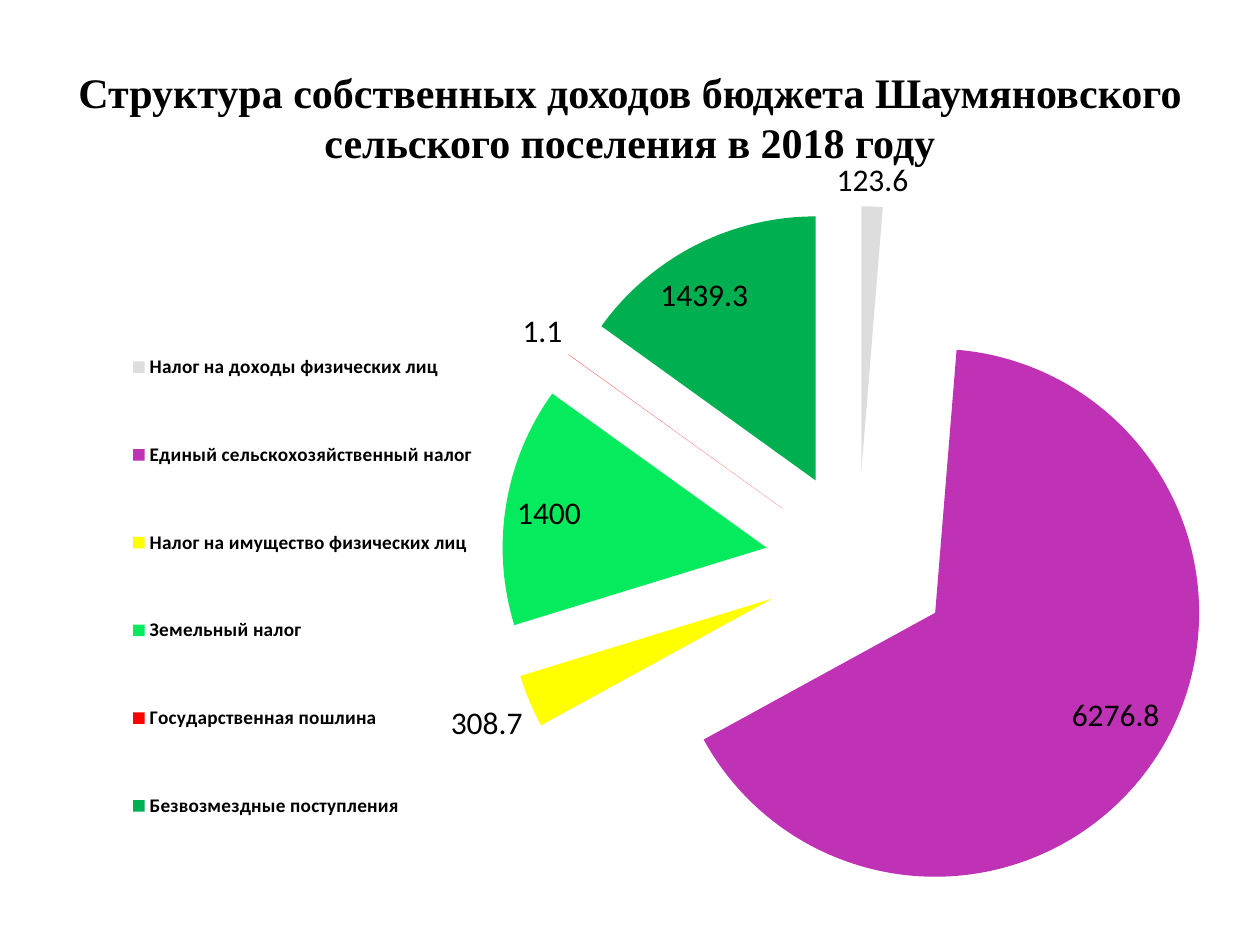
import pptx
import pptx.chart.data
import pptx.dml.color
import pptx.enum.chart
import pptx.enum.text
import pptx.oxml
import pptx.oxml.ns
import pptx.util

Inches = pptx.util.Inches
Pt = pptx.util.Pt
qn = pptx.oxml.ns.qn

TITLE = "Структура собственных доходов бюджета Шаумяновского сельского поселения в 2018 году"
TAXES = [
    ("Налог на доходы физических лиц", 123.6, "DDDDDD"),
    ("Единый сельскохозяйственный налог", 6276.8, "BF31B5"),
    ("Налог на имущество физических лиц", 308.7, "FFFF00"),
    ("Земельный налог", 1400, "05EB5D"),
    ("Государственная пошлина", 1.1, "FF0000"),
    ("Безвозмездные поступления", 1439.3, "00B050"),
]


def color(text):
    return pptx.dml.color.RGBColor.from_string(text)


def style(font, name, size, bold=False):
    font.name = name
    font.size = Pt(size)
    font.bold = bold
    font.color.rgb = color("000000")


def layout(x, y, w, h, inner=False):
    node = pptx.oxml.parse_xml(
        '<c:layout xmlns:c="http://schemas.openxmlformats.org/drawingml/2006/chart">'
        "<c:manualLayout/></c:layout>"
    )
    parts = [("layoutTarget", "inner")] if inner else []
    parts += [("xMode", "edge"), ("yMode", "edge")]
    parts += [("x", x), ("y", y), ("w", w), ("h", h)]
    for tag, val in parts:
        node[0].makeelement
        item = node[0].makeelement(qn("c:" + tag), {"val": str(val)})
        node[0].append(item)
    return node


def place(owner, node):
    for old in owner.findall(qn("c:layout")):
        owner.remove(old)
    mark = owner.find(qn("c:legendPos"))
    if mark is None:
        owner.insert(0, node)
    else:
        mark.addnext(node)


def add_title(slide, x, y, w, h):
    box = slide.shapes.add_textbox(Inches(x), Inches(y), Inches(w), Inches(h))
    frame = box.text_frame
    frame.word_wrap = True
    frame.vertical_anchor = pptx.enum.text.MSO_ANCHOR.MIDDLE
    para = frame.paragraphs[0]
    para.alignment = pptx.enum.text.PP_ALIGN.CENTER
    run = para.add_run()
    run.text = TITLE
    style(run.font, "Times New Roman", 24, True)


def add_pie(slide, x, y, w, h):
    data = pptx.chart.data.CategoryChartData()
    data.categories = [name for name, _, _ in TAXES]
    data.add_series("Series 1", [val for _, val, _ in TAXES])
    chart = slide.shapes.add_chart(
        pptx.enum.chart.XL_CHART_TYPE.PIE,
        Inches(x), Inches(y), Inches(w), Inches(h), data,
    ).chart
    chart.has_title = False
    style(chart.font, "Calibri", 18)

    chart.has_legend = True
    legend = chart.legend
    legend.position = pptx.enum.chart.XL_LEGEND_POSITION.RIGHT
    legend.include_in_layout = False
    style(legend.font, "Calibri", 11, True)
    place(legend._element, layout(0.1, 0.17, 0.29, 0.75))

    plot = chart.plots[0]
    plot.vary_by_categories = True
    area = chart._chartSpace.chart.plotArea
    place(area, layout(0.392, 0.062, 0.604, 0.905, True))

    pie = plot.series[0]
    cats = pie._element.find(qn("c:cat"))
    cats.addprevious(cats.makeelement(qn("c:explosion"), {"val": "35"}))
    for i, (_, _, fill) in enumerate(TAXES):
        form = pie.points[i].format
        form.fill.solid()
        form.fill.fore_color.rgb = color(fill)
        form.line.fill.background()

    labels = pie.data_labels
    labels.show_value = True
    labels.position = pptx.enum.chart.XL_LABEL_POSITION.BEST_FIT
    style(labels.font, "Calibri", 18)


def main():
    deck = pptx.Presentation()
    deck.slide_width = Inches(10)
    deck.slide_height = Inches(7.5)
    slide = deck.slides.add_slide(deck.slide_layouts[6])
    add_title(slide, 0.5, 0.3, 9, 1.25)
    add_pie(slide, 0, 1.25, 9.81, 6.25)
    deck.save("out.pptx")


if __name__ == "__main__":
    main()
